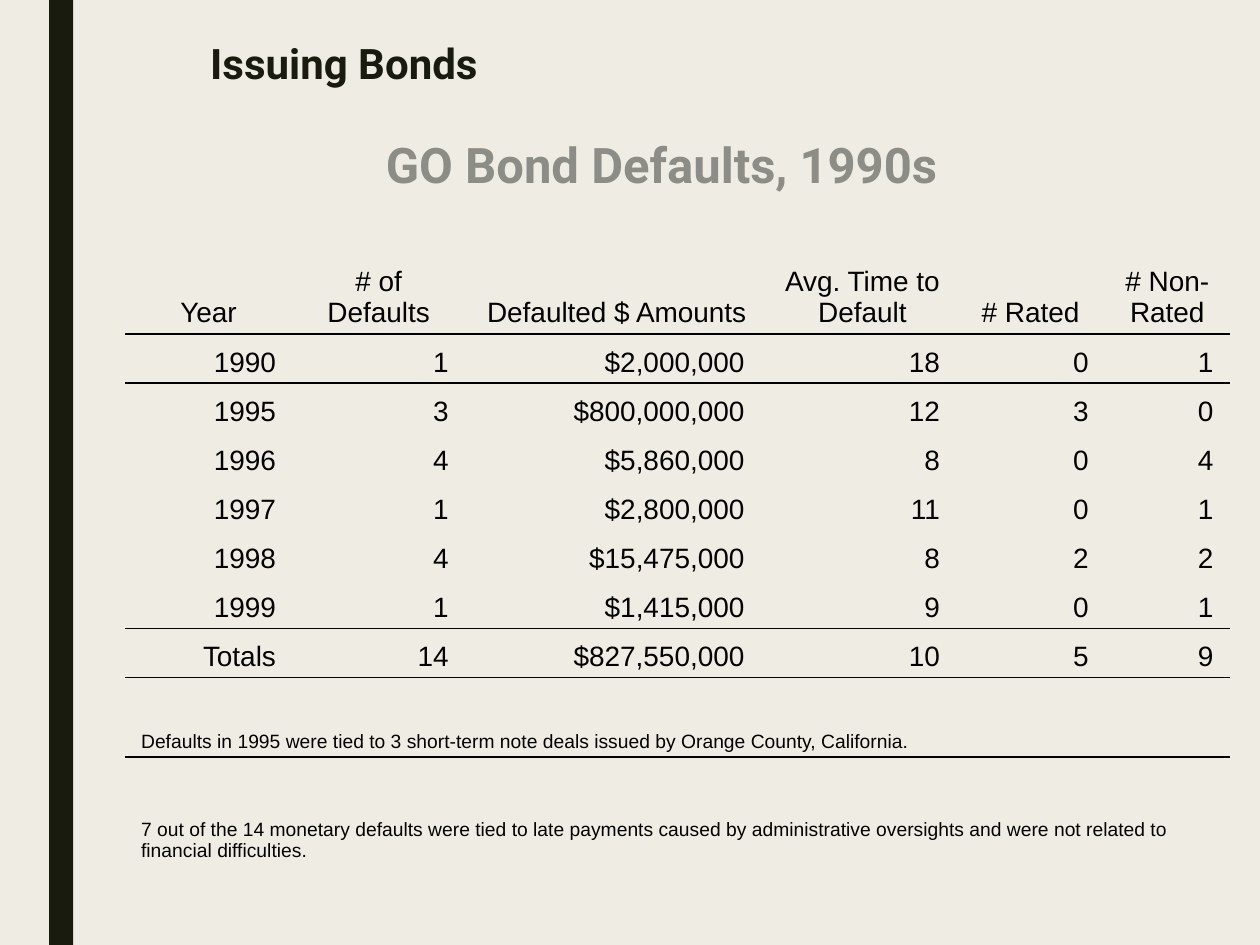
import pptx
import pptx.util
import pptx.dml.color
import pptx.enum.shapes
import pptx.enum.text
import pptx.oxml

Inches = pptx.util.Inches
Pt = pptx.util.Pt
Align = pptx.enum.text.PP_ALIGN
Anchor = pptx.enum.text.MSO_ANCHOR

NS = "http://schemas.openxmlformats.org/drawingml/2006/main"
PLAIN = "{2D5ABB26-0587-4C30-8999-92F81FD0307C}"  # table style without lines

COLS = [1.33, 1.37, 2.41, 1.49, 1.18, 0.99]
ROWS = [1.35] + [0.39] * 7 + [0.63, 0.87]
HEAD = ["Year", "# of Defaults", "Defaulted $ Amounts",
        "Avg. Time to Default", "# Rated", "# Non-Rated"]
DATA = [
    ["1990", "1", "$2,000,000 ", "18", "0", "1"],
    ["1995", "3", "$800,000,000 ", "12", "3", "0"],
    ["1996", "4", "$5,860,000 ", "8", "0", "4"],
    ["1997", "1", "$2,800,000 ", "11", "0", "1"],
    ["1998", "4", "$15,475,000 ", "8", "2", "2"],
    ["1999", "1", "$1,415,000 ", "9", "0", "1"],
    ["Totals", "14", "$827,550,000 ", "10", "5", "9"],
]
NOTES = [
    "Defaults in 1995 were tied to 3 short-term note deals issued by "
    "Orange County, California.",
    "7 out of the 14 monetary defaults were tied to late payments caused by "
    "administrative oversights and were not related to financial difficulties.",
]
RULED = {0, 6, 7}  # rows with a line below


def color(code):
    return pptx.dml.color.RGBColor.from_string(code)


def write(frame, text, size=16, font="Arial", ink="000000", bold=False,
          align=Align.LEFT, space=None):
    para = frame.paragraphs[0]
    para.alignment = align
    if space:
        para.line_spacing = space
    run = para.add_run()
    run.text = text
    run.font.size = Pt(size)
    run.font.name = font
    run.font.bold = bold
    run.font.color.rgb = color(ink)


class Deck:
    paper = "EFEDE3"
    dark = "191B0E"
    gray = "8C8D86"
    line = "000000"

    def __init__(self):
        self.file = pptx.Presentation()
        self.file.slide_width = Inches(10)
        self.file.slide_height = Inches(7.5)
        self.slide = self.file.slides.add_slide(self.file.slide_layouts[6])
        fill = self.slide.background.fill
        fill.solid()
        fill.fore_color.rgb = color(self.paper)

    def bar(self, x, y, w, h):
        shape = self.slide.shapes.add_shape(
            pptx.enum.shapes.MSO_SHAPE.RECTANGLE,
            Inches(x), Inches(y), Inches(w), Inches(h))
        shape.shadow.inherit = False
        shape.fill.solid()
        shape.fill.fore_color.rgb = color(self.dark)
        shape.line.fill.background()

    def text(self, x, y, w, h, words, **style):
        box = self.slide.shapes.add_textbox(
            Inches(x), Inches(y), Inches(w), Inches(h))
        box.text_frame.word_wrap = True
        write(box.text_frame, words, font="Roboto", bold=True, **style)

    def table(self, x, y, cols, rows):
        frame = self.slide.shapes.add_table(
            len(rows), len(cols), Inches(x), Inches(y),
            Inches(sum(cols)), Inches(sum(rows)))
        grid = frame.table
        grid.first_row = grid.horz_banding = False
        frame._element.find(f".//{{{NS}}}tableStyleId").text = PLAIN
        for col, size in zip(grid.columns, cols):
            col.width = Inches(size)
        for row, size in zip(grid.rows, rows):
            row.height = Inches(size)
        return grid

    def edge(self, cell, side):
        cell._tc.get_or_add_tcPr().append(pptx.oxml.parse_xml(
            f'<a:{side} xmlns:a="{NS}" w="12700"><a:solidFill>'
            f'<a:srgbClr val="{self.line}"/></a:solidFill></a:{side}>'))

    def cell(self, grid, row, col, words, **style):
        cell = grid.cell(row, col)
        cell.vertical_anchor = Anchor.BOTTOM
        cell.margin_left = cell.margin_right = Inches(0.13)
        cell.margin_top = cell.margin_bottom = Inches(0.04)
        if row - 1 in RULED:
            self.edge(cell, "lnT")
        if row in RULED:
            self.edge(cell, "lnB")
        cell.fill.background()
        write(cell.text_frame, words, **style)


def main():
    deck = Deck()

    # Side bar and headings
    deck.bar(0.39, 0, 0.19, 7.5)
    deck.text(1.57, 0.3, 8.2, 0.81, "Issuing Bonds",
              size=24, ink=deck.dark, space=0.89)
    deck.text(0.75, 1.11, 9, 5.7, "GO Bond Defaults, 1990s",
              size=28, ink=deck.gray, align=Align.CENTER, space=0.8)

    # Defaults by year
    grid = deck.table(0.99, 1.3, COLS, ROWS)
    for r, row in enumerate([HEAD] + DATA):
        for c, words in enumerate(row):
            deck.cell(grid, r, c, words,
                      align=Align.RIGHT if r else Align.CENTER)

    # Notes across the full width
    last = len(COLS) - 1
    for r, note in enumerate(NOTES, len(DATA) + 1):
        grid.cell(r, 0).merge(grid.cell(r, last))
        deck.cell(grid, r, 0, note, size=11)

    deck.file.save("out.pptx")


if __name__ == "__main__":
    main()
